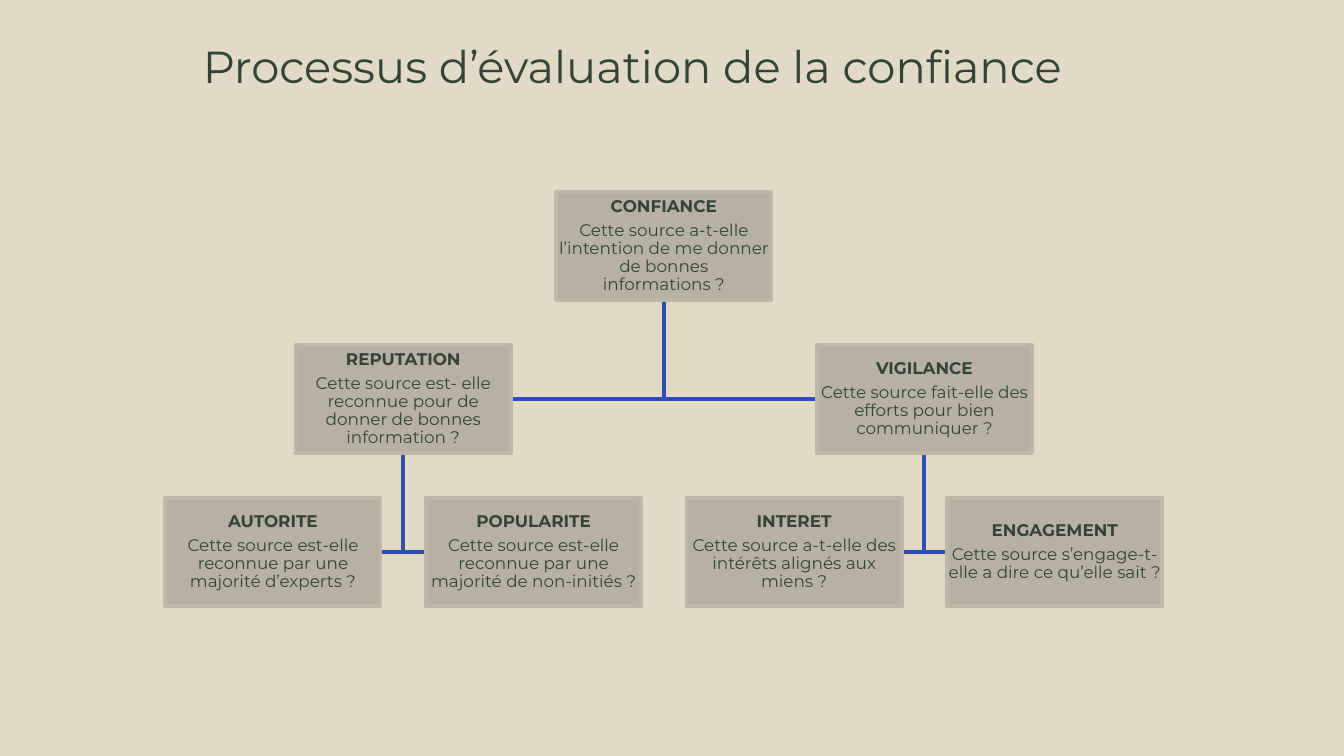
from pptx import Presentation
from pptx.dml.color import RGBColor
from pptx.enum.shapes import MSO_SHAPE
from pptx.enum.text import MSO_ANCHOR, PP_ALIGN
from pptx.util import Pt

RECTANGLE = MSO_SHAPE.RECTANGLE
TOP, MIDDLE = MSO_ANCHOR.TOP, MSO_ANCHOR.MIDDLE
CENTER = PP_ALIGN.CENTER

FONT = "Montserrat"
INK, PAPER = "334436", "E3DAC5"
CARD_FILL, CARD_LINE, LINK = "B8B0A3", "C0B7A6", "2C4EB8"
CARD_W, CARD_H = 115.4, 57.7
ROW_STEP = 82

TREE = (
    "CONFIANCE", "Cette source a-t-elle l’intention de me donner de bonnes informations ?", [
        ("REPUTATION", "Cette source est- elle reconnue pour de donner de bonnes information ?", [
            ("AUTORITE", "Cette source est-elle reconnue par une majorité d’experts ?", []),
            ("POPULARITE", "Cette source est-elle reconnue par une majorité de non-initiés ?", []),
        ]),
        ("VIGILANCE", "Cette source fait-elle des efforts pour bien communiquer ?", [
            ("INTERET", "Cette source a-t-elle des intérêts alignés aux miens ?", []),
            ("ENGAGEMENT", "Cette source s’engage-t-elle a dire ce qu’elle sait ?", []),
        ]),
    ],
)


def color(hex_value):
    return RGBColor.from_string(hex_value)


def set_text(frame, paragraphs, size, margin, anchor):
    frame.word_wrap = True
    frame.vertical_anchor = anchor
    frame.margin_left = frame.margin_right = Pt(margin)
    frame.margin_top = frame.margin_bottom = Pt(margin)
    for index, (wording, bold) in enumerate(paragraphs):
        paragraph = frame.add_paragraph() if index else frame.paragraphs[0]
        paragraph.text = wording
        paragraph.alignment = CENTER
        font = paragraph.font
        font.name, font.size, font.bold = FONT, Pt(size), bold
        font.color.rgb = color(INK)


def place_title(slide, wording, left, top, width, height):
    title = slide.shapes.title
    title.left, title.top, title.width, title.height = map(Pt, (left, top, width, height))
    set_text(title.text_frame, [(wording, False)], 24, 7.2, TOP)


def add_card(slide, heading, question, left, top):
    card = slide.shapes.add_shape(RECTANGLE, Pt(left), Pt(top), Pt(CARD_W), Pt(CARD_H))
    card.shadow.inherit = False
    card.fill.solid()
    card.fill.fore_color.rgb = color(CARD_FILL)
    card.line.color.rgb = color(CARD_LINE)
    card.line.width = Pt(2)
    set_text(card.text_frame, [(heading, True), (question, False)], 9, 0.7, MIDDLE)
    for paragraph in card.text_frame.paragraphs:
        paragraph.line_spacing = 0.9
        paragraph.space_after = Pt(3.15)


def add_elbow(slide, start_x, start_y, end_x, end_y):
    builder = slide.shapes.build_freeform(Pt(start_x), Pt(start_y))
    builder.add_line_segments(
        [(Pt(start_x), Pt(end_y)), (Pt(end_x), Pt(end_y))], close=False)
    elbow = builder.convert_to_shape()
    elbow.shadow.inherit = False
    elbow.fill.background()
    elbow.line.color.rgb = color(LINK)
    elbow.line.width = Pt(2.25)


def count_leaves(node):
    return sum(map(count_leaves, node[2])) or 1


def add_tree(slide, node, left, top, width):
    heading, question, children = node
    center = left + width / 2
    leaf_width = width / count_leaves(node)
    child_top = top + ROW_STEP
    child_left = left
    for child in children:
        child_width = leaf_width * count_leaves(child)
        child_center = child_left + child_width / 2
        side = CARD_W / 2 if child_center < center else -CARD_W / 2
        add_elbow(slide, center, top + CARD_H, child_center + side, child_top + CARD_H / 2)
        add_tree(slide, child, child_left, child_top, child_width)
        child_left += child_width
    add_card(slide, heading, question, center - CARD_W / 2, top)


def main():
    deck = Presentation()
    deck.slide_width, deck.slide_height = Pt(720), Pt(405)
    slide = deck.slides.add_slide(deck.slide_layouts[5])
    slide.background.fill.solid()
    slide.background.fill.fore_color.rgb = color(PAPER)
    place_title(slide, "Processus d’évaluation de la confiance", 64, 13.7, 549.4, 59.8)
    add_tree(slide, TREE, 76.4, 103, 558.4)
    deck.save("out.pptx")


if __name__ == "__main__":
    main()
